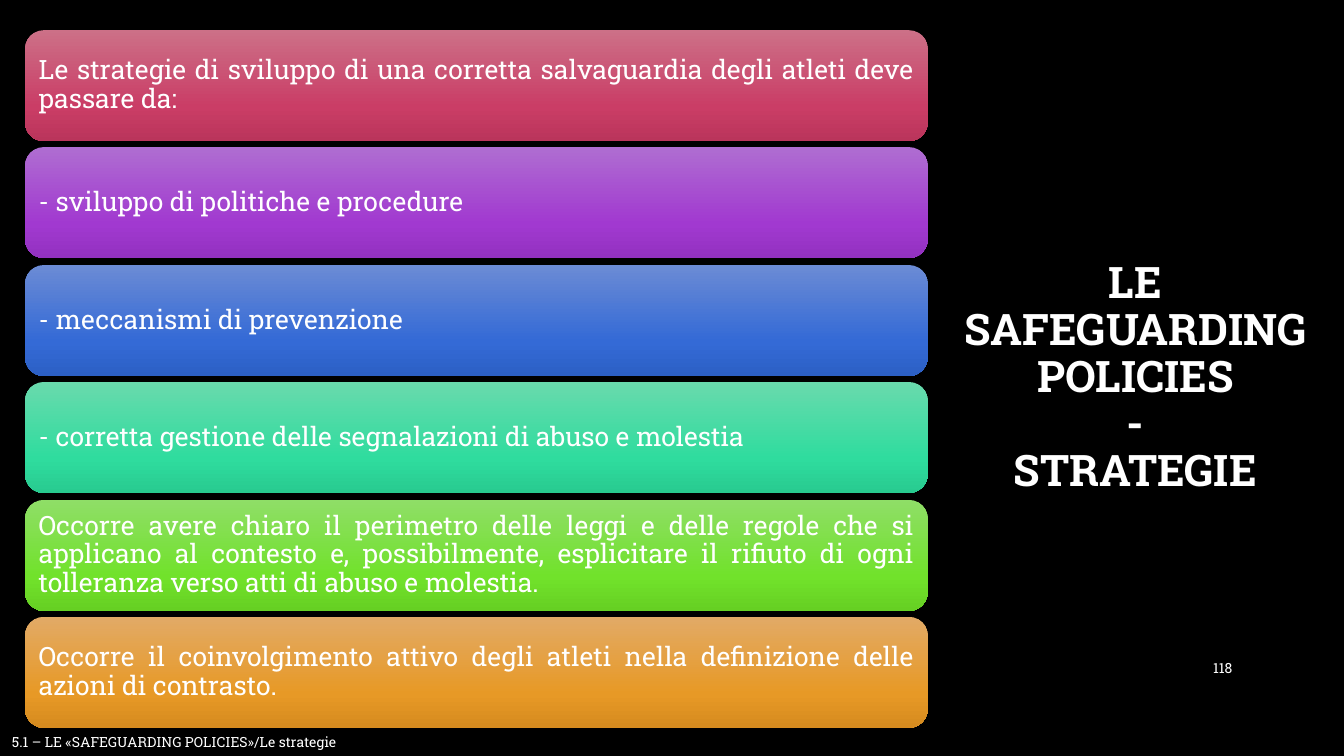
from copy import deepcopy
from dataclasses import dataclass

from pptx import Presentation
from pptx import util as u
from pptx.dml.color import RGBColor
from pptx.enum import shapes, text
from pptx.oxml.ns import qn

PX = 9144
FONT = "Roboto Slab"
BLACK = RGBColor(0x00, 0x00, 0x00)
WHITE = RGBColor(0xFF, 0xFF, 0xFF)
ROSE = (RGBColor(0xCC, 0x70, 0x87), RGBColor(0xCA, 0x3D, 0x66), RGBColor(0xBA, 0x35, 0x5B))
VIOLET = (RGBColor(0xAF, 0x6D, 0xD1), RGBColor(0xA1, 0x39, 0xD0), RGBColor(0x93, 0x31, 0xC0))
BLUE = (RGBColor(0x6B, 0x8B, 0xD5), RGBColor(0x34, 0x6A, 0xD6), RGBColor(0x2C, 0x60, 0xC5))
MINT = (RGBColor(0x69, 0xDA, 0xAD), RGBColor(0x2F, 0xDC, 0x9E), RGBColor(0x28, 0xCB, 0x90))
GREEN = (RGBColor(0x8F, 0xDE, 0x67), RGBColor(0x71, 0xE2, 0x2B), RGBColor(0x66, 0xD0, 0x23))
ORANGE = (RGBColor(0xE2, 0xAA, 0x66), RGBColor(0xE7, 0x99, 0x26), RGBColor(0xD6, 0x8B, 0x1F))
STOP_POSITIONS = (0, 0.69, 1)
LEFT = text.PP_ALIGN.LEFT
RIGHT = text.PP_ALIGN.RIGHT
CENTER = text.PP_ALIGN.CENTER
JUSTIFY = text.PP_ALIGN.JUSTIFY
MIDDLE = text.MSO_ANCHOR.MIDDLE
TOP = text.MSO_ANCHOR.TOP

CARD_LEFT, CARD_WIDTH, CARD_HEIGHT = 25, 895, 110
FIRST_TOP, LAST_TOP = 30, 612
CARD_INSET = 8


@dataclass(frozen=True)
class Card:
    wording: str
    colours: tuple[RGBColor, RGBColor, RGBColor]
    align: text.PP_ALIGN = LEFT


@dataclass(frozen=True)
class Label:
    wording: str
    left: int
    top: int
    width: int
    height: int
    align: text.PP_ALIGN
    anchor: text.MSO_ANCHOR


CARDS = (
    Card("Le strategie di sviluppo di una corretta salvaguardia degli atleti deve passare da:", ROSE, JUSTIFY),
    Card("- sviluppo di politiche e procedure", VIOLET),
    Card("- meccanismi di prevenzione", BLUE),
    Card("- corretta gestione delle segnalazioni di abuso e molestia", MINT),
    Card(
        "Occorre avere chiaro il perimetro delle leggi e delle regole che si applicano al contesto e, "
        "possibilmente, esplicitare il rifiuto di ogni tolleranza verso atti di abuso e molestia.",
        GREEN,
        JUSTIFY,
    ),
    Card("Occorre il coinvolgimento attivo degli atleti nella definizione delle azioni di contrasto.", ORANGE, JUSTIFY),
)
LABELS = (
    Label("118", 1150, 643, 82, 40, RIGHT, MIDDLE),
    Label("5.1 – LE «SAFEGUARDING POLICIES»/Le strategie", 2, 723, 669, 27, LEFT, TOP),
)
TITLE_LINES = ("LE SAFEGUARDING POLICIES", "-", "STRATEGIE")


def add_span(para, wording: str, size: int, bold: bool = False) -> None:
    span = para.add_run()
    span.text = wording
    span.font.name = FONT
    span.font.size = u.Pt(size)
    span.font.bold = bold
    span.font.color.rgb = WHITE


def fill_title(title) -> None:
    title.left, title.top, title.width, title.height = (n * PX for n in (927, 70, 398, 611))
    frame = title.text_frame
    frame.word_wrap = True
    frame.auto_size = text.MSO_AUTO_SIZE.NONE
    frame.vertical_anchor = MIDDLE
    para = frame.paragraphs[0]
    para.alignment = CENTER
    para.line_spacing = 0.9
    for index, line in enumerate(TITLE_LINES):
        if index:
            para.add_line_break()
        add_span(para, line, 31, bold=True)


def paint_gradient(box, colours: tuple[RGBColor, RGBColor, RGBColor]) -> None:
    box.fill.gradient()
    box.fill.gradient_angle = 270
    stop_list = box.element.spPr.find(".//" + qn("a:gsLst"))
    stop_list.append(deepcopy(stop_list[-1]))
    for stop, position, colour in zip(box.fill.gradient_stops, STOP_POSITIONS, colours):
        stop.position = position
        stop.color.rgb = colour


def draw_card(page, card: Card, top: int) -> None:
    box = page.shapes.add_shape(
        shapes.MSO_SHAPE.ROUNDED_RECTANGLE, CARD_LEFT * PX, top * PX, CARD_WIDTH * PX, CARD_HEIGHT * PX
    )
    box.shadow.inherit = False
    box.line.fill.background()
    paint_gradient(box, card.colours)
    frame = box.text_frame
    frame.word_wrap = True
    frame.vertical_anchor = MIDDLE
    frame.margin_left = frame.margin_right = CARD_INSET * PX
    frame.margin_top = frame.margin_bottom = CARD_INSET * PX
    para = frame.paragraphs[0]
    para.alignment = card.align
    para.line_spacing = 0.9
    add_span(para, card.wording, 19)


def draw_label(page, label: Label) -> None:
    box = page.shapes.add_textbox(label.left * PX, label.top * PX, label.width * PX, label.height * PX)
    frame = box.text_frame
    frame.word_wrap = True
    frame.vertical_anchor = label.anchor
    para = frame.paragraphs[0]
    para.alignment = label.align
    add_span(para, label.wording, 10)


def main() -> None:
    deck = Presentation()
    deck.slide_width, deck.slide_height = 1333 * PX, 750 * PX
    page = deck.slides.add_slide(deck.slide_layouts.get_by_name("Title Only"))
    page.background.fill.solid()
    page.background.fill.fore_color.rgb = BLACK
    fill_title(page.shapes.title)
    for index, card in enumerate(CARDS):
        draw_card(page, card, FIRST_TOP + round(index * (LAST_TOP - FIRST_TOP) / (len(CARDS) - 1)))
    for label in LABELS:
        draw_label(page, label)
    deck.save("out.pptx")


if __name__ == "__main__":
    main()
